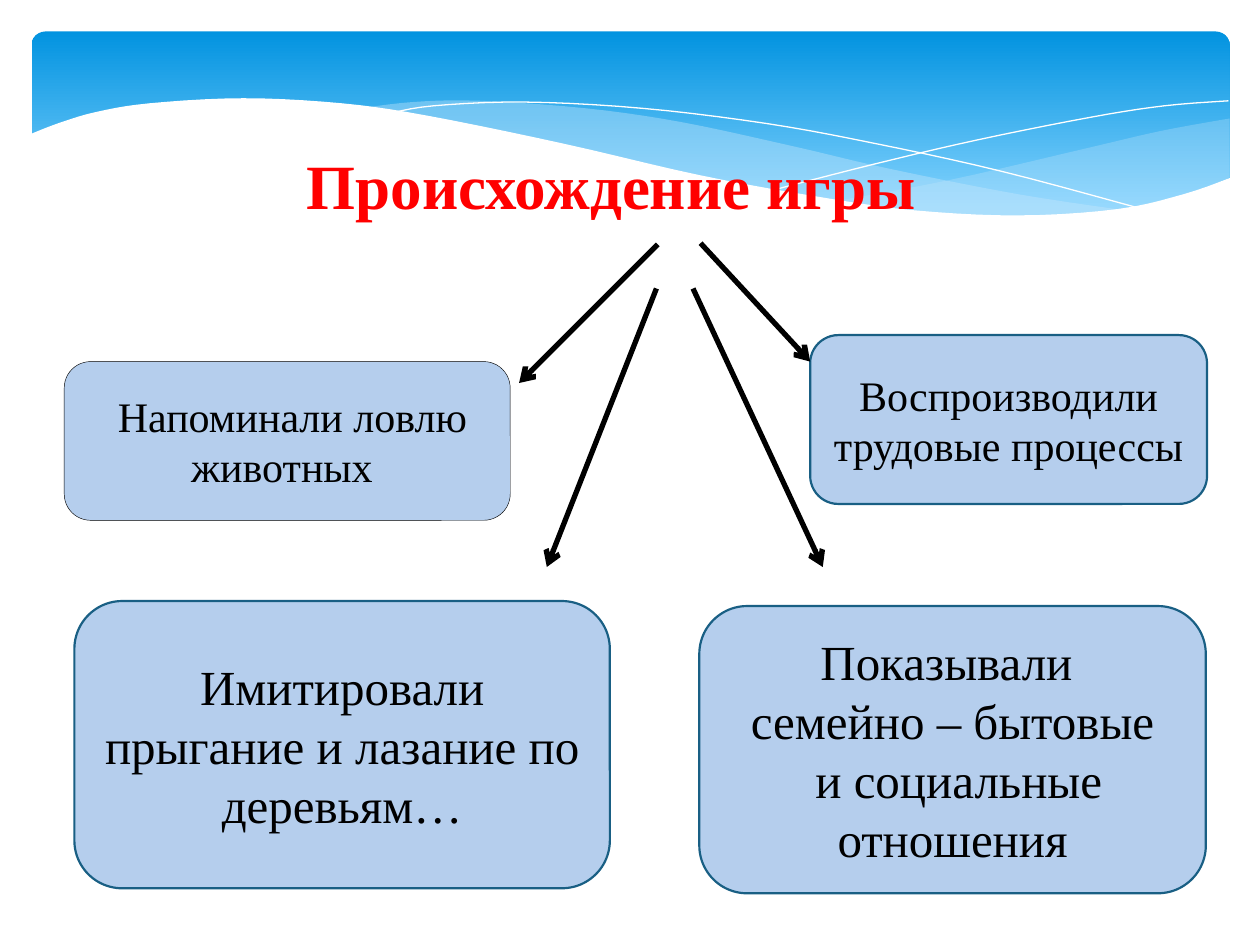
from dataclasses import dataclass
from typing import Optional

import lxml.etree
import pptx
import pptx.dml.color
import pptx.enum.shapes
import pptx.enum.text
import pptx.oxml.ns
import pptx.util

Inches = pptx.util.Inches
Point = tuple[float, float]

COLORS = {
    "sky_top": "0293E0", "sky_bottom": "83D3FE", "wave": "C6E7FC",
    "white": "FFFFFF", "black": "000000", "title": "FF0000",
    "box": "B5CEED", "border": "195F84",
}
FONT = "Times New Roman"
CURVE_STEPS = 5


@dataclass
class Wave:
    """Smooth edges joined end to end; filled when fill is named, else a hairline."""
    edges: list[list[Point]]
    fill: Optional[str] = None
    opacity: int = 100


@dataclass
class Box:
    left: float
    top: float
    width: float
    height: float
    lines: list[str]
    size: int
    border: str = "border"
    border_width: float = 1.25


@dataclass
class Arrow:
    start: Point
    end: Point


WAVES = [
    Wave([[(9.76, 0.94), (9.21, 1.04), (8.61, 1.18), (7.53, 1.43), (6.61, 1.6)],
          [(6.61, 1.6), (7.19, 1.67), (8.03, 1.72), (8.81, 1.67), (9.35, 1.56), (9.76, 1.41)]],
         "wave", 29),
    Wave([[(8.93, 1.67), (8.07, 1.54), (7.06, 1.34), (6.29, 1.16), (5.41, 0.97),
           (4.65, 0.86), (3.8, 0.8), (3.28, 0.81), (2.86, 0.86)],
          [(2.86, 0.86), (3.62, 0.97), (4.49, 1.16), (5.3, 1.35), (6.18, 1.53),
           (7.09, 1.66), (7.85, 1.72), (8.38, 1.72), (8.93, 1.67)]], "wave", 40),
    Wave([[(3.09, 0.9), (3.44, 0.84), (4.16, 0.81), (5.1, 0.86), (6.08, 0.98),
           (6.95, 1.14), (7.95, 1.36), (9.07, 1.66)]]),
    Wave([[(6.13, 1.51), (6.95, 1.3), (7.76, 1.11), (8.66, 0.93), (9.24, 0.84), (9.75, 0.8)]]),
    Wave([[(0.23, 1.07), (0.46, 0.98), (0.76, 0.89), (1.19, 0.82), (1.93, 0.78),
           (2.71, 0.82), (3.4, 0.92), (4.47, 1.14), (5.55, 1.39), (6.48, 1.56),
           (7.26, 1.67), (8.09, 1.71), (8.87, 1.66), (9.4, 1.54), (9.77, 1.41)],
          [(9.77, 2.24), (0.23, 2.24)]], "white"),
]

BOXES = [
    Box(0.51, 2.87, 3.54, 1.26, [" Напоминали ловлю животных "], 24, "black", 0.25),
    Box(5.55, 4.81, 4.02, 2.28,
        ["Показывали ", "семейно – бытовые", " и социальные отношения"], 28),
    Box(0.59, 4.77, 4.25, 2.28, ["Имитировали прыгание и лазание по деревьям…"], 28),
    Box(6.43, 2.66, 3.15, 1.34, ["Воспроизводили трудовые процессы"], 24),
]

ARROWS = [
    Arrow((5.56, 1.93), (6.43, 2.87)),
    Arrow((5.22, 1.94), (4.12, 3.04)),
    Arrow((5.5, 2.29), (6.53, 4.5)),
    Arrow((5.21, 2.29), (4.34, 4.5)),
]


def color(name: str) -> pptx.dml.color.RGBColor:
    return pptx.dml.color.RGBColor.from_string(COLORS[name])


def add_xml(parent, tag: str, **attributes: str) -> None:
    lxml.etree.SubElement(parent, pptx.oxml.ns.qn(tag), attributes)


def smooth(knots: list[Point]) -> list[Point]:
    """Catmull-Rom curve through the knots."""
    padded = [knots[0], *knots, knots[-1]]
    curve = [knots[0]]
    for a, b, c, d in zip(padded, padded[1:], padded[2:], padded[3:]):
        for step in range(1, CURVE_STEPS + 1):
            t = step / CURVE_STEPS
            curve.append(tuple(
                (2 * q + (r - p) * t + (2 * p - 5 * q + 4 * r - s) * t ** 2
                 + (3 * q - p - 3 * r + s) * t ** 3) / 2
                for p, q, r, s in zip(a, b, c, d)))
    return curve


def add_rounded(page, left: float, top: float, width: float, height: float):
    shape = page.shapes.add_shape(
        pptx.enum.shapes.MSO_SHAPE.ROUNDED_RECTANGLE,
        Inches(left), Inches(top), Inches(width), Inches(height))
    shape.shadow.inherit = False
    return shape


def write_text(frame, lines: list[str], size: int, ink: str, bold: bool = False) -> None:
    frame.word_wrap = True
    frame.vertical_anchor = pptx.enum.text.MSO_ANCHOR.MIDDLE
    style = {"name": FONT, "size": pptx.util.Pt(size), "bold": bold}
    for index, line in enumerate(lines):
        para = frame.add_paragraph() if index else frame.paragraphs[0]
        para.alignment = pptx.enum.text.PP_ALIGN.CENTER
        span = para.add_run()
        span.text = line
        for name, value in style.items():
            setattr(span.font, name, value)
        span.font.color.rgb = color(ink)


def draw_sky(page) -> None:
    sky = add_rounded(page, 0.25, 0.25, 9.51, 1.56)
    sky.adjustments[0] = 0.071
    sky.line.fill.background()
    sky.fill.gradient()
    sky.fill.gradient_angle = 270
    stops = [(0, "sky_top"), (0.9, "sky_bottom")]
    for stop, (position, name) in zip(sky.fill.gradient_stops, stops):
        stop.position = position
        stop.color.rgb = color(name)


def draw_wave(page, wave: Wave) -> None:
    points = [(Inches(x), Inches(y)) for edge in wave.edges for x, y in smooth(edge)]
    builder = page.shapes.build_freeform(*points[0])
    builder.add_line_segments(points[1:], close=wave.fill is not None)
    shape = builder.convert_to_shape()
    shape.shadow.inherit = False
    if wave.fill is None:
        shape.fill.background()
        shape.line.color.rgb = color("white")
        shape.line.width = 0
        return
    shape.line.fill.background()
    shape.fill.solid()
    shape.fill.fore_color.rgb = color(wave.fill)
    if wave.opacity < 100:
        tint = shape._element.spPr.find(pptx.oxml.ns.qn("a:solidFill"))[0]
        add_xml(tint, "a:alpha", val=str(wave.opacity * 1000))


def draw_box(page, box: Box) -> None:
    shape = add_rounded(page, box.left, box.top, box.width, box.height)
    shape.fill.solid()
    shape.fill.fore_color.rgb = color("box")
    shape.line.color.rgb = color(box.border)
    shape.line.width = pptx.util.Pt(box.border_width)
    write_text(shape.text_frame, box.lines, box.size, "black")


def draw_arrow(page, arrow: Arrow) -> None:
    ends = [Inches(value) for value in (*arrow.start, *arrow.end)]
    connector = page.shapes.add_connector(pptx.enum.shapes.MSO_CONNECTOR.STRAIGHT, *ends)
    connector.line.color.rgb = color("black")
    connector.line.width = pptx.util.Pt(3)
    properties = connector._element.spPr
    add_xml(properties.find(pptx.oxml.ns.qn("a:ln")), "a:tailEnd", type="arrow")
    add_xml(properties, "a:effectLst")


def draw_title(page, text: str) -> None:
    title = page.shapes.title
    place = {"left": 1.61, "top": 1.11, "width": 6.48, "height": 0.71}
    for name, value in place.items():
        setattr(title, name, Inches(value))
    write_text(title.text_frame, [text], 36, "title", bold=True)
    # Bring the title in front of the waves
    page.shapes._spTree.append(title._element)


def main() -> None:
    deck = pptx.Presentation()
    deck.slide_width, deck.slide_height = Inches(10), Inches(7.5)
    page = deck.slides.add_slide(deck.slide_layouts.get_by_name("Title Only"))

    # Header decoration
    draw_sky(page)
    for wave in WAVES:
        draw_wave(page, wave)

    # Title and the four origins it points to
    draw_title(page, "Происхождение игры")
    for box in BOXES:
        draw_box(page, box)
    for arrow in ARROWS:
        draw_arrow(page, arrow)

    deck.save("out.pptx")


if __name__ == "__main__":
    main()
